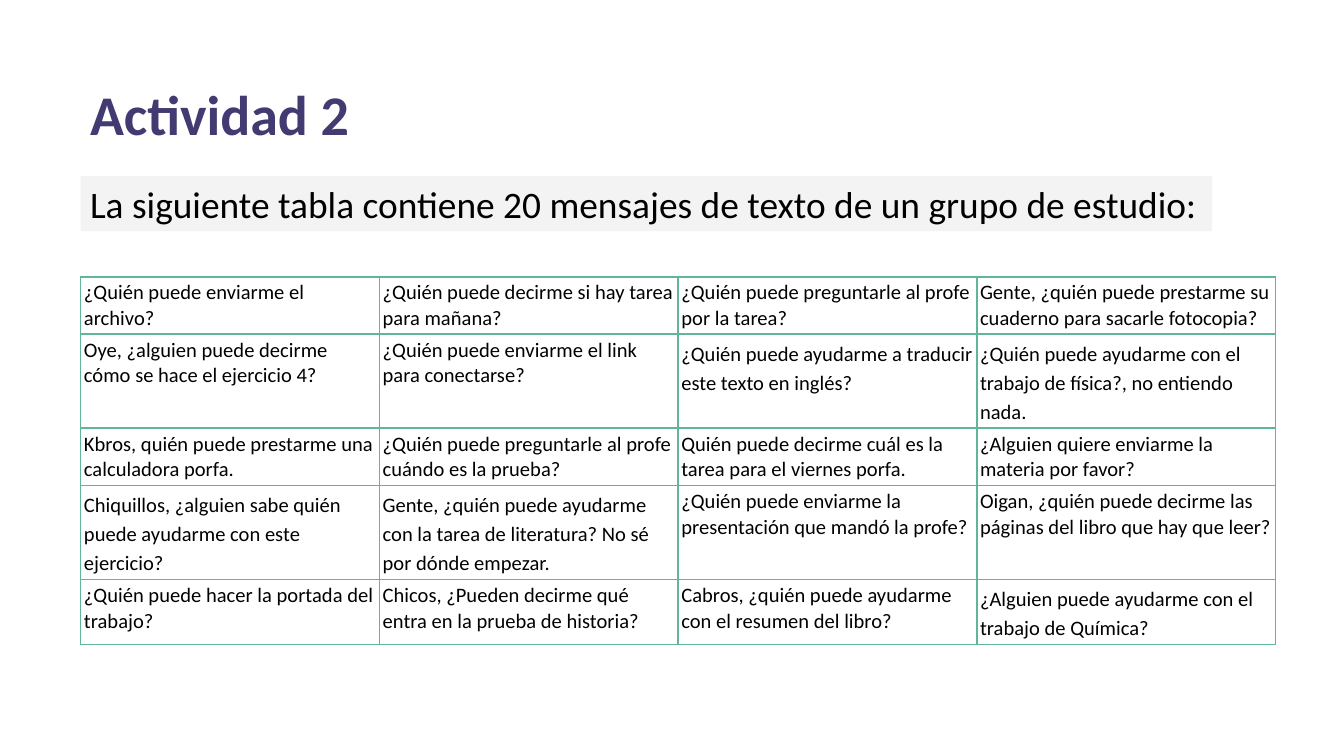
from dataclasses import dataclass

import lxml.etree
import pptx
import pptx.dml.color
import pptx.enum.shapes
import pptx.enum.text
import pptx.oxml.ns
import pptx.util

Inches = pptx.util.Inches
RGBColor = pptx.dml.color.RGBColor
Align = pptx.enum.text.PP_ALIGN

PURPLE = RGBColor(0x42, 0x3B, 0x71)
BLACK = RGBColor(0, 0, 0)
LIGHT_GRAY = RGBColor(0xF3, 0xF3, 0xF3)
GREEN = RGBColor(0x60, 0xB6, 0x98)
FONT = "Calibri"
LEFT = Inches(0.6)
CELL_MARGIN = Inches(0.1) // 4


@dataclass(frozen=True)
class Message:
    text: str
    line_spacing: float | None = None


MESSAGES = [
    [
        Message("¿Quién puede enviarme el archivo?"),
        Message("¿Quién puede decirme si hay tarea para mañana?"),
        Message("¿Quién puede preguntarle al profe por la tarea?"),
        Message("Gente, ¿quién puede prestarme su cuaderno para sacarle fotocopia?"),
    ],
    [
        Message("Oye, ¿alguien puede decirme cómo se hace el ejercicio 4?"),
        Message("¿Quién puede enviarme el link para conectarse?"),
        Message("¿Quién puede ayudarme a traducir este texto en inglés?", 1.15),
        Message("¿Quién puede ayudarme con el trabajo de física?, no entiendo nada.", 1.15),
    ],
    [
        Message("Kbros, quién puede prestarme una calculadora porfa."),
        Message("¿Quién puede preguntarle al profe cuándo es la prueba?"),
        Message("Quién puede decirme cuál es la tarea para el viernes porfa."),
        Message("¿Alguien quiere enviarme la materia por favor?"),
    ],
    [
        Message("Chiquillos, ¿alguien sabe quién puede ayudarme con este ejercicio?", 1.15),
        Message("Gente, ¿quién puede ayudarme con la tarea de literatura? No sé por dónde empezar.", 1.15),
        Message("¿Quién puede enviarme la presentación que mandó la profe?"),
        Message("Oigan, ¿quién puede decirme las páginas del libro que hay que leer?"),
    ],
    [
        Message("¿Quién puede hacer la portada del trabajo?"),
        Message("Chicos, ¿Pueden decirme qué entra en la prueba de historia?"),
        Message("Cabros, ¿quién puede ayudarme con el resumen del libro?"),
        Message("¿Alguien puede ayudarme con el trabajo de Química?", 1.15),
    ],
]


def write_text(text_frame, text: str, *, size: float, color: RGBColor = BLACK,
               bold: bool = False, align=Align.LEFT,
               line_spacing: float | None = None) -> None:
    text_frame.word_wrap = True
    paragraph = text_frame.paragraphs[0]
    paragraph.alignment = align
    paragraph.line_spacing = line_spacing
    run = paragraph.add_run()
    run.text = text
    run.font.name = FONT
    run.font.size = pptx.util.Pt(size)
    run.font.bold = bold
    run.font.color.rgb = color


def set_insets(text_frame) -> None:
    text_frame.margin_left = text_frame.margin_right = Inches(0.07)
    text_frame.margin_top = text_frame.margin_bottom = Inches(0.04)
    text_frame.vertical_anchor = pptx.enum.text.MSO_ANCHOR.TOP


def add_title(slide) -> None:
    title = slide.shapes.title
    title.left, title.top = LEFT, Inches(0.55)
    title.width, title.height = Inches(2.37), Inches(0.58)
    set_insets(title.text_frame)
    write_text(title.text_frame, "Actividad 2", size=30, color=PURPLE, bold=True)
    title.text_frame.auto_size = pptx.enum.text.MSO_AUTO_SIZE.NONE


def add_instruction(slide) -> None:
    shape = slide.shapes.add_shape(
        pptx.enum.shapes.MSO_SHAPE.RECTANGLE,
        LEFT, Inches(1.31), Inches(8.42), Inches(0.41))
    shape.shadow.inherit = False
    shape.fill.solid()
    shape.fill.fore_color.rgb = LIGHT_GRAY
    shape.line.fill.background()
    set_insets(shape.text_frame)
    write_text(shape.text_frame,
               "La siguiente tabla contiene 20 mensajes de texto de un grupo de estudio:",
               size=20, align=Align.JUSTIFY)


def add_borders(cell) -> None:
    properties = cell._tc.get_or_add_tcPr()
    qn = pptx.oxml.ns.qn
    for side in ("lnL", "lnR", "lnT", "lnB"):
        line = lxml.etree.SubElement(properties, qn(f"a:{side}"), w=str(pptx.util.Pt(1)))
        fill = lxml.etree.SubElement(line, qn("a:solidFill"))
        lxml.etree.SubElement(fill, qn("a:srgbClr"), val=str(GREEN))


def fill_cell(cell, message: Message) -> None:
    cell.margin_left = cell.margin_right = CELL_MARGIN
    cell.margin_top = cell.margin_bottom = CELL_MARGIN
    add_borders(cell)
    cell.fill.background()
    write_text(cell.text_frame, message.text, size=11, line_spacing=message.line_spacing)


def add_message_table(slide, messages: list[list[Message]]) -> None:
    height = Inches(2.68)
    frame = slide.shapes.add_table(
        len(messages), len(messages[0]), LEFT, Inches(2.06), Inches(8.89), height)
    table = frame.table
    table.first_row = False
    table.horz_banding = False
    for row, row_messages in zip(table.rows, messages):
        row.height = Inches(0.39)
        for cell, message in zip(row.cells, row_messages):
            fill_cell(cell, message)
    frame.height = height


def main() -> None:
    presentation = pptx.Presentation()
    presentation.slide_width = Inches(10)
    presentation.slide_height = presentation.slide_width * 9 // 16
    slide = presentation.slides.add_slide(presentation.slide_layouts[5])
    add_title(slide)
    add_instruction(slide)
    add_message_table(slide, MESSAGES)
    presentation.save("out.pptx")


if __name__ == "__main__":
    main()
